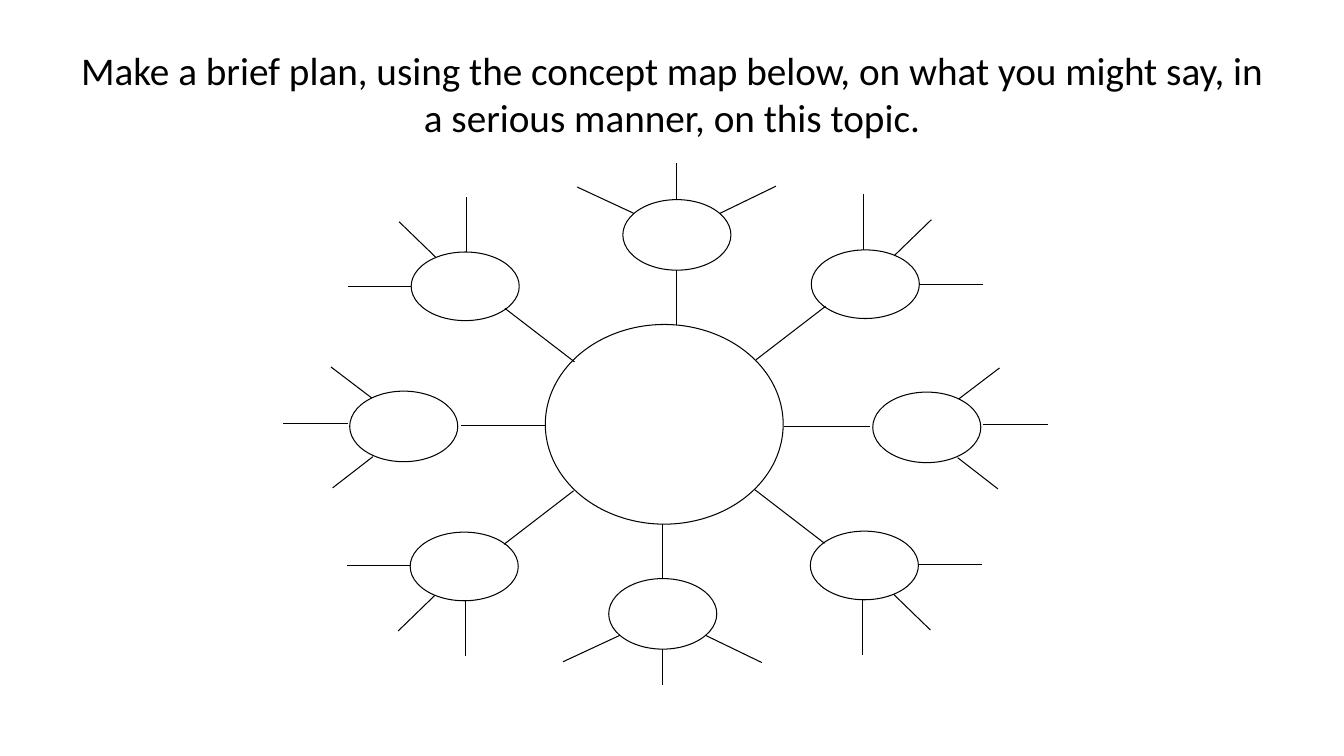
from dataclasses import dataclass

from lxml.etree import SubElement
from pptx import Presentation
from pptx.dml.color import RGBColor
from pptx.enum.shapes import MSO_CONNECTOR, MSO_SHAPE
from pptx.enum.text import MSO_ANCHOR, PP_ALIGN
from pptx.oxml.ns import qn
from pptx.util import Pt


@dataclass(frozen=True)
class Theme:
    ink: RGBColor = RGBColor(0, 0, 0)
    paper: RGBColor = RGBColor(255, 255, 255)
    font: str = "Calibri"
    title_size: float = 28
    line_width: float = 0.75


def set_values(target, values):
    for name, value in values.items():
        setattr(target, name, value)


class ConceptMap:
    def __init__(self, slide, theme):
        self.slide = slide
        self.theme = theme

    def title(self, text, left, top, width, height):
        box = self.slide.shapes.add_textbox(Pt(left), Pt(top), Pt(width), Pt(height))
        set_values(box.text_frame, {"word_wrap": True, "vertical_anchor": MSO_ANCHOR.MIDDLE})
        paragraph = box.text_frame.paragraphs[0]
        set_values(paragraph, {"text": text, "alignment": PP_ALIGN.CENTER})
        font = paragraph.runs[0].font
        set_values(font, {"name": self.theme.font, "size": Pt(self.theme.title_size)})
        font.color.rgb = self.theme.ink

    def outline(self, line):
        line.color.rgb = self.theme.ink
        line.width = Pt(self.theme.line_width)

    def oval(self, center, size):
        left, top = (middle - length / 2 for middle, length in zip(center, size))
        shape = self.slide.shapes.add_shape(
            MSO_SHAPE.OVAL, Pt(left), Pt(top), Pt(size[0]), Pt(size[1])
        )
        shape.shadow.inherit = False
        shape.fill.solid()
        shape.fill.fore_color.rgb = self.theme.paper
        self.outline(shape.line)

    def line(self, start, end):
        connector = self.slide.shapes.add_connector(
            MSO_CONNECTOR.STRAIGHT, *(Pt(value) for value in (*start, *end))
        )
        SubElement(connector._element.spPr, qn("a:effectLst"))
        self.outline(connector.line)

    def branch(self, center, mirror, pattern):
        def place(offset):
            return [middle + sign * delta for middle, sign, delta in zip(center, mirror, offset)]

        for start, end in pattern["spokes"]:
            self.line(place(start), place(end))
        self.oval(center, pattern["size"])
        self.line(*(place(offset) for offset in pattern["link"]))


VERTICAL = {
    "size": (77.2, 50.4),
    "link": ((0, 64.1), (0, 25.2)),
    "spokes": (
        ((-29.5, -14.8), (-71.2, -34.2)),
        ((0, -25.2), (0, -51.1)),
        ((29.5, -14.8), (70.8, -34.8)),
    ),
}
HORIZONTAL = {
    "size": (77.2, 50.4),
    "link": ((-101.9, -0.7), (-40.7, -0.7)),
    "spokes": (
        ((22.7, -20.2), (52, -42.5)),
        ((40, -2.2), (86.6, -2.2)),
        ((22, 21.6), (50.8, 43.9)),
    ),
}
DIAGONAL = {
    "size": (77.2, 49),
    "link": ((-78.1, 54), (-28.4, 15.8)),
    "spokes": (
        ((83.9, 0.4), (0, 0.4)),
        ((-1.8, 1.4), (47.2, -46.1)),
        ((-1.1, 0), (-1.1, -64.1)),
    ),
}
BRANCHES = (
    ((483.5, 167.8), (1, 1), VERTICAL),
    ((473.4, 438.5), (1, -1), VERTICAL),
    ((288.4, 304.6), (-1, 1), HORIZONTAL),
    ((662, 305.3), (1, 1), HORIZONTAL),
    ((618.1, 203), (1, 1), DIAGONAL),
    ((332.3, 204.5), (-1, 1), DIAGONAL),
    ((617.4, 403.9), (1, -1), DIAGONAL),
    ((331.6, 404.6), (-1, -1), DIAGONAL),
)


def main():
    presentation = Presentation()
    set_values(presentation, {"slide_width": Pt(960), "slide_height": Pt(540)})
    slide = presentation.slides.add_slide(presentation.slide_layouts[6])
    concept_map = ConceptMap(slide, Theme())
    concept_map.title(
        "Make a brief plan, using the concept map below, on what you might say, "
        "in a serious manner, on this topic.",
        48, 21.6, 864, 90,
    )
    concept_map.oval((474.5, 303.1), (169.9, 142.6))
    for center, mirror, pattern in BRANCHES:
        concept_map.branch(center, mirror, pattern)
    presentation.save("out.pptx")


if __name__ == "__main__":
    main()
